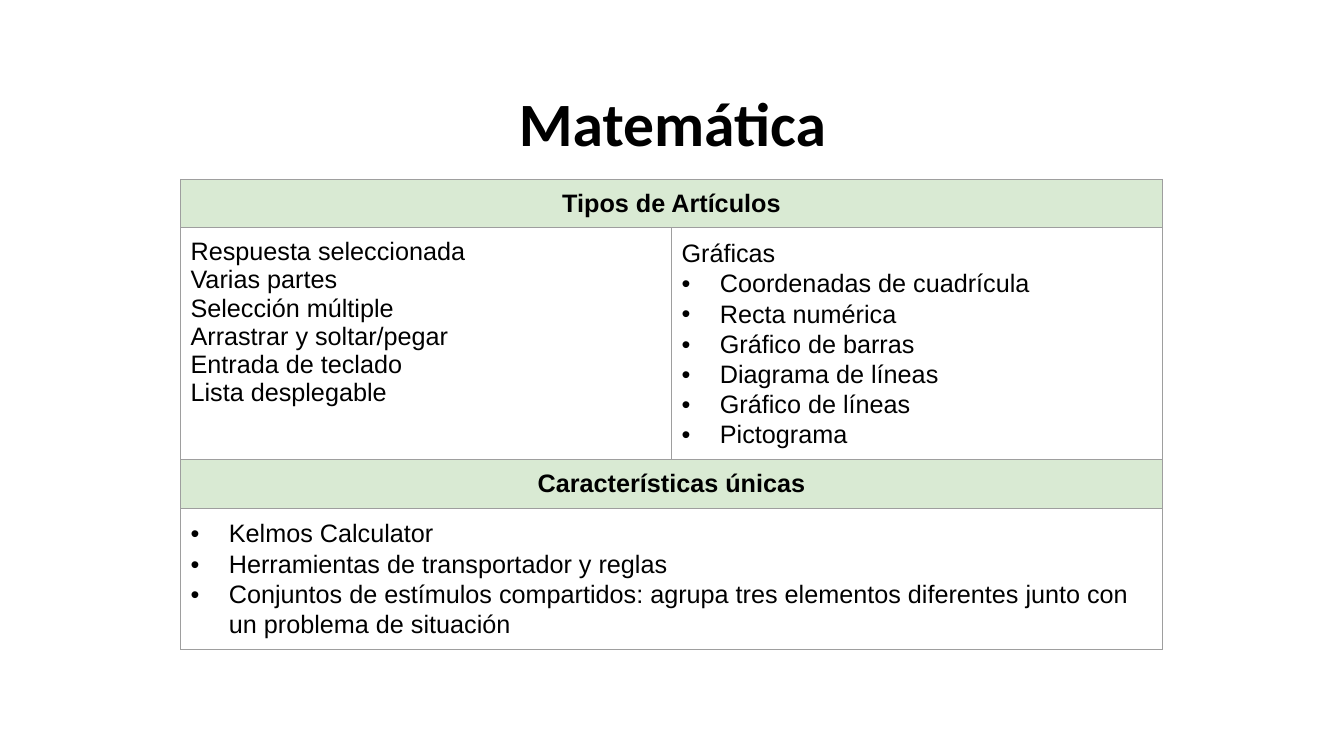
from lxml import etree
from pptx import Presentation
from pptx.dml.color import RGBColor
from pptx.enum.text import MSO_ANCHOR as Anchor, PP_ALIGN as Align
from pptx.oxml.ns import qn
from pptx.util import Pt

PX = 9144  # 100 px to the inch
COLORS = {"text": "000000", "header": "D9EAD3", "border": "9E9E9E"}

ITEM_TYPES = ["Respuesta seleccionada", "Varias partes", "Selección múltiple",
              "Arrastrar y soltar/pegar", "Entrada de teclado", "Lista desplegable"]
GRAPH_TYPES = ["Coordenadas de cuadrícula", "Recta numérica", "Gráfico de barras",
               "Diagrama de líneas", "Gráfico de líneas", "Pictograma"]
FEATURES = ["Kelmos Calculator", "Herramientas de transportador y reglas",
            "Conjuntos de estímulos compartidos: agrupa tres elementos diferentes "
            "junto con un problema de situación"]


def px(length):
    return round(length * PX)


def color(name):
    return RGBColor.from_string(COLORS[name])


def add_bullet(paragraph):
    properties = paragraph._p.get_or_add_pPr()
    properties.set("marL", str(px(38)))
    properties.set("indent", str(px(-38)))
    bullet_color = etree.SubElement(properties, qn("a:buClr"))
    etree.SubElement(bullet_color, qn("a:srgbClr"), val=COLORS["text"])
    etree.SubElement(properties, qn("a:buFont"), typeface="Arial")
    etree.SubElement(properties, qn("a:buChar"), char="•")
    tabs = etree.SubElement(properties, qn("a:tabLst"))
    etree.SubElement(tabs, qn("a:tab"), pos=str(px(50)), algn="l")


def write(frame, text, first=False, size=18, font="Arial", bold=False,
          align=Align.LEFT, spacing=None, bullet=False):
    paragraph = frame.paragraphs[0] if first else frame.add_paragraph()
    if bullet:
        add_bullet(paragraph)
    paragraph.alignment = align
    if spacing:
        paragraph.line_spacing = spacing
    run = paragraph.add_run()
    run.text = text
    run.font.size, run.font.name, run.font.bold = Pt(size), font, bold
    run.font.color.rgb = color("text")


def write_list(cell, lines, **style):
    for index, line in enumerate(lines):
        write(cell.text_frame, line, first=index == 0, **style)


def format_cell(cell, header):
    cell.margin_left = cell.margin_right = px(10)
    cell.margin_top = cell.margin_bottom = px(10)
    properties = cell._tc.get_or_add_tcPr()
    for side in ("a:lnL", "a:lnR", "a:lnT", "a:lnB"):
        line = etree.SubElement(properties, qn(side), w=str(Pt(0.75)))
        fill = etree.SubElement(line, qn("a:solidFill"))
        etree.SubElement(fill, qn("a:srgbClr"), val=COLORS["border"])
    if header:
        cell.fill.solid()
        cell.fill.fore_color.rgb = color("header")
    else:
        cell.fill.background()


def place_title(slide, left, top, width, height):
    title = slide.shapes.title
    title.left, title.top, title.width, title.height = map(px, (left, top, width, height))
    frame = title.text_frame
    frame.word_wrap = True
    frame.vertical_anchor = Anchor.MIDDLE
    write(frame, "Matemática", first=True, size=44, font="Calibri", bold=True,
          align=Align.CENTER, spacing=0.9)


def place_table(slide, left, top, width, row_heights):
    shape = slide.shapes.add_table(len(row_heights), 2, px(left), px(top),
                                   px(width), px(sum(row_heights)))
    table = shape.table
    table.first_row = table.horz_banding = False
    for column in table.columns:
        column.width = px(width / 2)
    for index, height in enumerate(row_heights):
        table.rows[index].height = px(height)
        for cell in table.rows[index].cells:
            format_cell(cell, header=index in (0, 2))
    for row in (0, 2, 3):
        table.cell(row, 0).merge(table.cell(row, 1))

    # Section headers
    for row, heading in ((0, "Tipos de Artículos"), (2, "Características únicas")):
        write(table.cell(row, 0).text_frame, heading, first=True, bold=True,
              align=Align.CENTER)

    # Item types, graphs and features
    write_list(table.cell(1, 0), ITEM_TYPES)
    graphs = table.cell(1, 1)
    write(graphs.text_frame, "Gráficas", first=True, spacing=1.07)
    for graph in GRAPH_TYPES:
        write(graphs.text_frame, graph, spacing=1.07, bullet=True)
    write_list(table.cell(3, 0), FEATURES, spacing=1.07, bullet=True)


def main():
    presentation = Presentation()
    presentation.slide_width, presentation.slide_height = px(1333), px(750)
    slide = presentation.slides.add_slide(presentation.slide_layouts[5])
    place_title(slide, 92, 53, 1150, 145)
    place_table(slide, 179, 178, 974, (47, 230, 47, 140))
    presentation.save("out.pptx")


if __name__ == "__main__":
    main()
